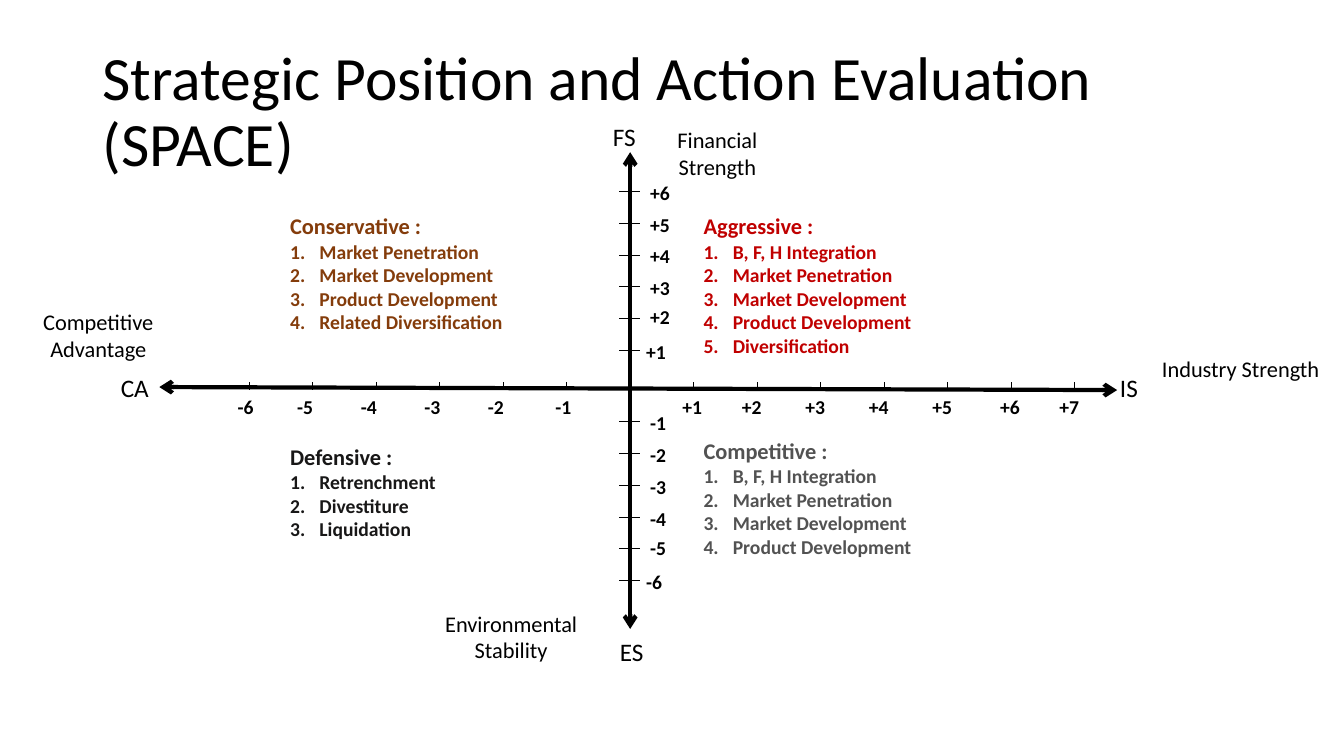
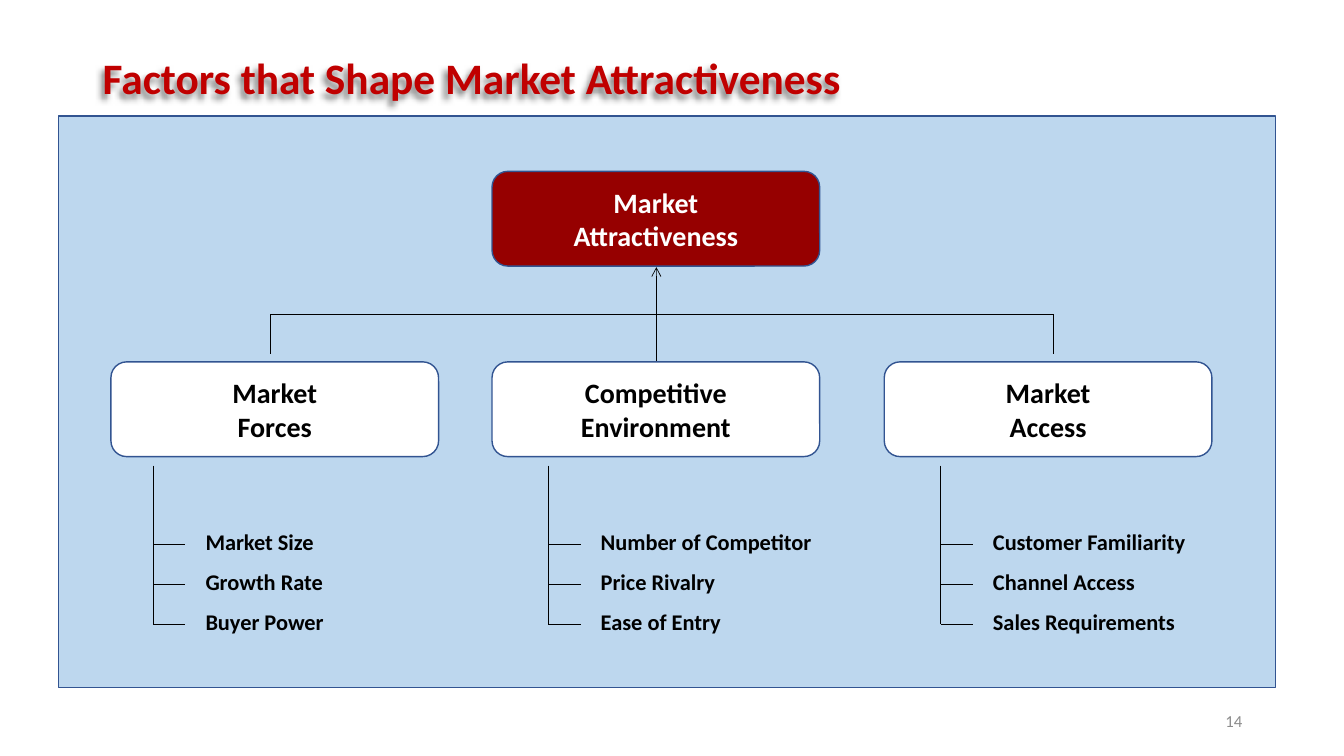
"""Build the SPACE matrix and the market attractiveness slides."""
from dataclasses import dataclass

import pptx
import pptx.dml.color
import pptx.enum.shapes
import pptx.enum.text
import pptx.oxml
import pptx.oxml.ns
import pptx.util
from lxml import etree

Inches = pptx.util.Inches
ALIGN = pptx.enum.text.PP_ALIGN
ANCHOR = pptx.enum.text.MSO_ANCHOR
SHAPE = pptx.enum.shapes.MSO_SHAPE
qn = pptx.oxml.ns.qn


@dataclass(frozen=True)
class Theme:
    font: str = "Calibri"
    ink: str = "000000"
    white: str = "FFFFFF"
    red: str = "C00000"
    brown: str = "843C0B"
    charcoal: str = "181717"
    gray: str = "525252"
    number_gray: str = "8C8C8C"
    maroon: str = "960000"
    panel: str = "BDD7EE"
    outline: str = "325491"
    title: float = 44
    bold_title: float = 31
    box: float = 20
    pole: float = 18
    body: float = 16
    item: float = 14
    number: float = 12
    axis: float = 3
    border: float = 1
    hairline: float = 0.5


class Deck:
    def __init__(self, theme):
        self.theme = theme
        self.prs = pptx.Presentation()
        self.prs.slide_width = Inches(13.33)
        self.prs.slide_height = Inches(7.5)
        self.slide = None

    def new_slide(self):
        self.slide = self.prs.slides.add_slide(self.prs.slide_layouts[6])

    def rgb(self, color):
        return pptx.dml.color.RGBColor.from_string(color)

    def add_run(self, paragraph, words, size, color, bold=False, align=ALIGN.LEFT):
        paragraph.alignment = align
        run = paragraph.add_run()
        run.text = words
        run.font.name = self.theme.font
        run.font.size = pptx.util.Pt(size)
        run.font.bold = bold
        run.font.color.rgb = self.rgb(color)

    def fill_lines(self, frame, lines, size, color, bold, align):
        for index, words in enumerate(lines):
            paragraph = frame.add_paragraph() if index else frame.paragraphs[0]
            self.add_run(paragraph, words, size, color, bold, align)

    def text(self, left, top, width, height, lines, size, color=None, bold=False,
             align=ALIGN.LEFT, wrap=True, anchor=ANCHOR.TOP):
        box = self.slide.shapes.add_textbox(
            Inches(left), Inches(top), Inches(width), Inches(height))
        frame = box.text_frame
        frame.word_wrap = wrap
        frame.vertical_anchor = anchor
        self.fill_lines(frame, lines, size, color or self.theme.ink, bold, align)
        return box

    def title(self, words, top, size, color, bold=False):
        heading = self.text(0.92, top, 11.5, 1.45, [words], size, color, bold,
                            anchor=ANCHOR.MIDDLE)
        heading.text_frame.paragraphs[0].line_spacing = 0.9
        return heading

    def cast_shadow(self, heading):
        effects = etree.SubElement(heading._element.spPr, qn("a:effectLst"))
        shadow = etree.SubElement(effects, qn("a:outerShdw"), blurRad="50800",
                                  dist="50800", dir="8100000", algn="tr", rotWithShape="0")
        tone = etree.SubElement(shadow, qn("a:srgbClr"), val=self.theme.ink)
        etree.SubElement(tone, qn("a:alpha"), val="50000")

    def line(self, x1, y1, x2, y2, width=None, head=False, tail=False):
        connector = self.slide.shapes.add_connector(
            pptx.enum.shapes.MSO_CONNECTOR.STRAIGHT,
            Inches(x1), Inches(y1), Inches(x2), Inches(y2))
        connector.line.color.rgb = self.rgb(self.theme.ink)
        connector.line.width = pptx.util.Pt(width or self.theme.hairline)
        properties = connector._element.spPr
        stroke = properties.find(qn("a:ln"))
        for tag, wanted in (("a:headEnd", head), ("a:tailEnd", tail)):
            if wanted:
                etree.SubElement(stroke, qn(tag), type="arrow")
        etree.SubElement(properties, qn("a:effectLst"))

    def shape(self, kind, left, top, width, height, fill, lines=(), color=None):
        shape = self.slide.shapes.add_shape(
            kind, Inches(left), Inches(top), Inches(width), Inches(height))
        shape.shadow.inherit = False
        shape.fill.solid()
        shape.fill.fore_color.rgb = self.rgb(fill)
        shape.line.color.rgb = self.rgb(self.theme.outline)
        shape.line.width = pptx.util.Pt(self.theme.border)
        shape.text_frame.vertical_anchor = ANCHOR.MIDDLE
        self.fill_lines(shape.text_frame, lines, self.theme.box, color, True, ALIGN.CENTER)

    def numbered(self, left, top, heading, items, color):
        height = 0.37 + 0.235 * len(items)
        box = self.text(left, top, 3.46, height, [heading], self.theme.body, color, True)
        for item in items:
            paragraph = box.text_frame.add_paragraph()
            self.add_run(paragraph, item, self.theme.item, color, True)
            properties = paragraph._p.get_or_add_pPr()
            properties.set("marL", str(Inches(0.29)))
            properties.set("indent", str(Inches(-0.29)))
            etree.SubElement(properties, qn("a:buFont"), typeface="+mj-lt")
            etree.SubElement(properties, qn("a:buAutoNum"), type="arabicPeriod")

    def tick_label(self, left, top, step):
        width = 0.4 if step > 0 else 0.36
        self.text(left, top, width, 0.34, [f"{step:+d}"], self.theme.item,
                  bold=True, wrap=False)


def space_matrix(deck):
    theme = deck.theme
    deck.new_slide()
    deck.title("Strategic Position and Action Evaluation (SPACE)", 0.4, theme.title, theme.ink)

    origin = 6.25
    deck.line(1.58, 3.84, 11.08, 3.87, theme.axis, head=True, tail=True)
    deck.line(origin, 1.51, origin, 6.24, theme.axis, head=True, tail=True)

    for left, top, width, lines in (
        (11.28, 3.47, 2.05, ["Industry Strength"]),
        (0, 3.01, 1.95, ["Competitive", "Advantage"]),
        (6.04, 1.2, 2.15, ["Financial", "Strength"]),
        (3.97, 6, 2.2, ["Environmental Stability"]),
    ):
        deck.text(left, top, width, 0.64, lines, theme.body, align=ALIGN.CENTER)

    for left, top, width, pole in (
        (11.01, 3.64, 0.38, "IS"),
        (1.1, 3.64, 0.48, "CA"),
        (5.98, 1.15, 0.43, "FS"),
        (6.05, 6.26, 0.44, "ES"),
    ):
        deck.text(left, top, width, 0.4, [pole], theme.pole, wrap=False)

    growth = ["Market Penetration", "Market Development", "Product Development"]
    integration = ["B, F, H Integration"]
    for left, top, posture, strategies, color in (
        (6.88, 2.06, "Aggressive :", integration + growth + ["Diversification"], theme.red),
        (6.88, 4.29, "Competitive :", integration + growth, theme.gray),
        (2.78, 4.35, "Defensive :", ["Retrenchment", "Divestiture", "Liquidation"],
         theme.charcoal),
        (2.78, 2.06, "Conservative :", growth + ["Related Diversification"], theme.brown),
    ):
        deck.numbered(left, top, posture, strategies, color)

    for step in range(-6, 8):
        x = origin + 0.63 * step
        deck.line(x, 3.79, x, 3.87)
        if step:
            deck.tick_label(x - (0.21 if abs(step) in (1, 6) else 0.25), 3.87, step)

    for step in range(-6, 7):
        if step:
            y = (3.79 if step > 0 else 3.87) - 0.315 * step
            rank = step if step > 0 else step + 7
            deck.line(6.14, y, 6.35, y)
            deck.tick_label(6.31 if rank == 1 else 6.35,
                            y - (0.18 if rank == 2 else 0.155), step)


def market_attractiveness(deck):
    theme = deck.theme
    deck.new_slide()
    deck.shape(SHAPE.RECTANGLE, 0.58, 1.15, 12.07, 5.67, theme.panel)
    heading = deck.title("Factors that Shape Market Attractiveness", 0.07,
                         theme.bold_title, theme.red, True)
    deck.cast_shadow(heading)
    deck.text(9.42, 6.95, 3, 0.4, ["14"], theme.number, theme.number_gray,
              align=ALIGN.RIGHT, anchor=ANCHOR.MIDDLE)

    box_size = (3.25, 0.94)
    deck.shape(SHAPE.ROUNDED_RECTANGLE, 4.88, 1.7, *box_size, theme.maroon,
               ["Market", "Attractiveness"], theme.white)
    deck.line(6.51, 3.59, 6.51, 2.65, tail=True)
    deck.line(2.68, 3.12, 10.45, 3.12)
    for x in (2.68, 10.45):
        deck.line(x, 3.12, x, 3.51)

    for left, stem, driver, factors in (
        (1.1, 1.52, ["Market", "Forces"], ["Market Size", "Growth Rate", "Buyer Power"]),
        (4.88, 5.44, ["Competitive", "Environment"],
         ["Number of Competitor", "Price Rivalry", "Ease of Entry"]),
        (8.77, 9.33, ["Market", "Access"],
         ["Customer Familiarity", "Channel Access", "Sales Requirements"]),
    ):
        deck.shape(SHAPE.ROUNDED_RECTANGLE, left, 3.59, *box_size, theme.white,
                   driver, theme.ink)
        deck.line(stem, 4.62, stem, 6.19)
        for row, factor in enumerate(factors):
            y = 5.4 + 0.395 * row
            deck.line(stem, y, stem + 0.32, y)
            deck.text(stem + 0.42, y - 0.21, 2.3, 0.37, [factor], theme.body,
                      bold=True)


def main():
    deck = Deck(Theme())
    space_matrix(deck)
    market_attractiveness(deck)
    deck.prs.save("out.pptx")


if __name__ == "__main__":
    main()
